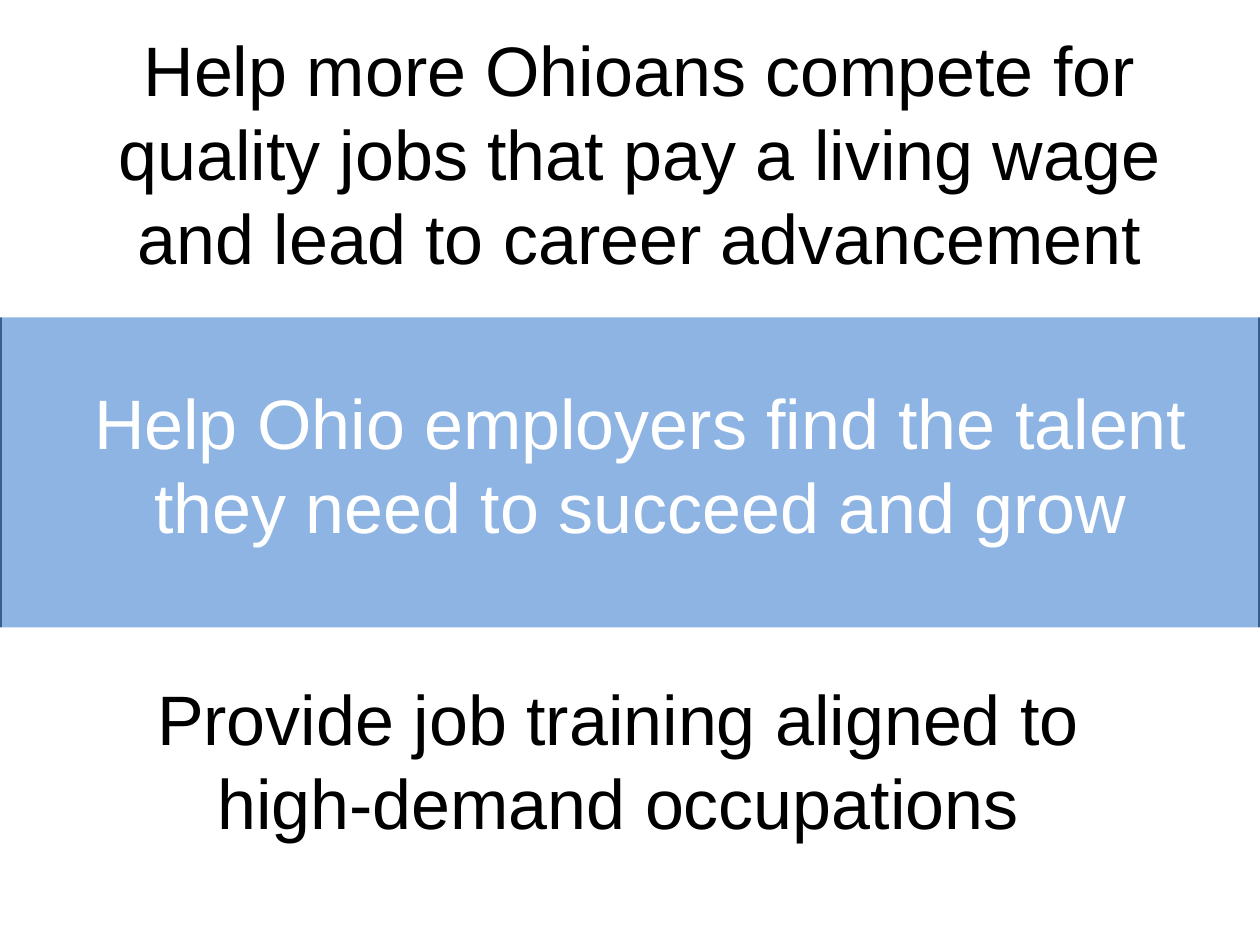
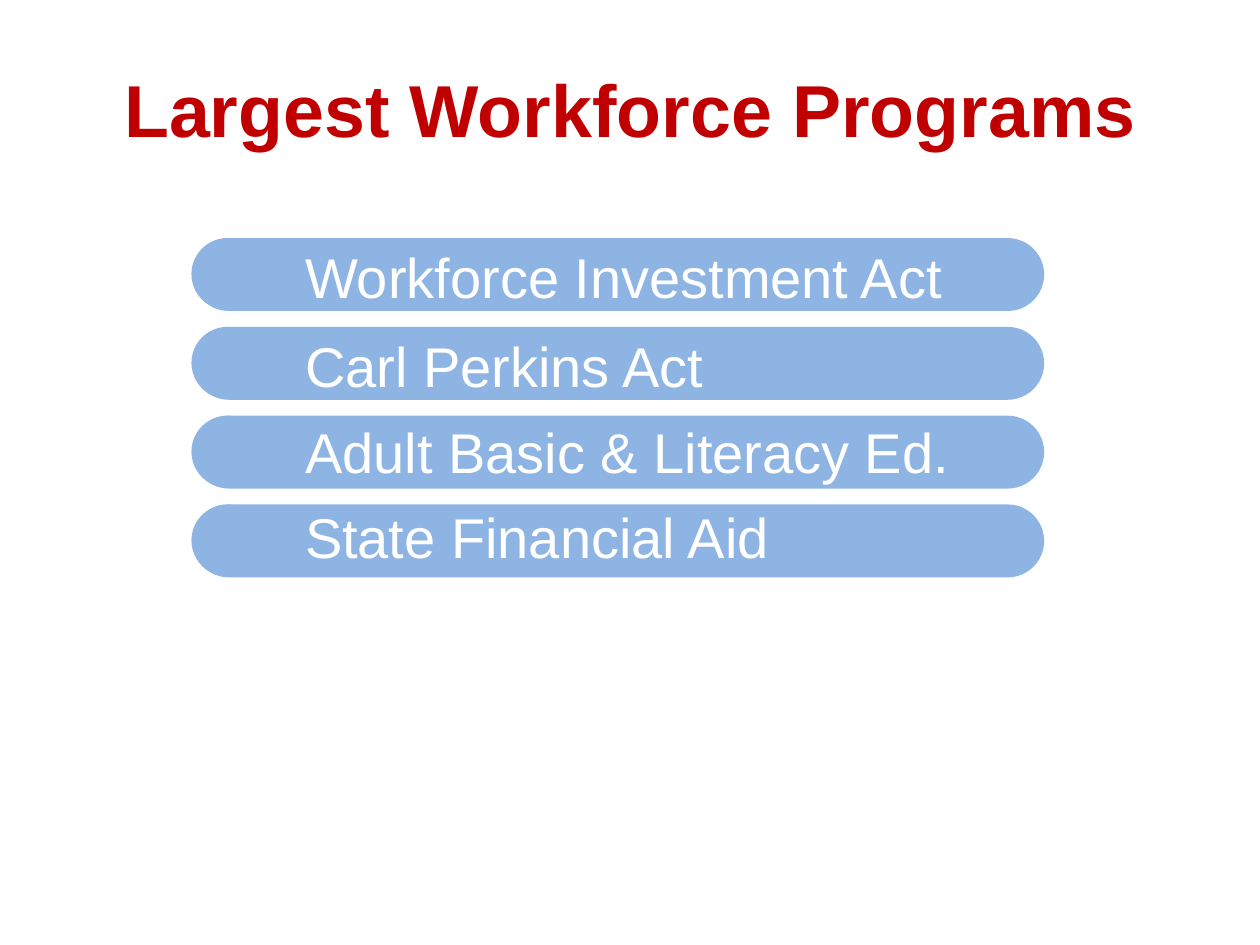
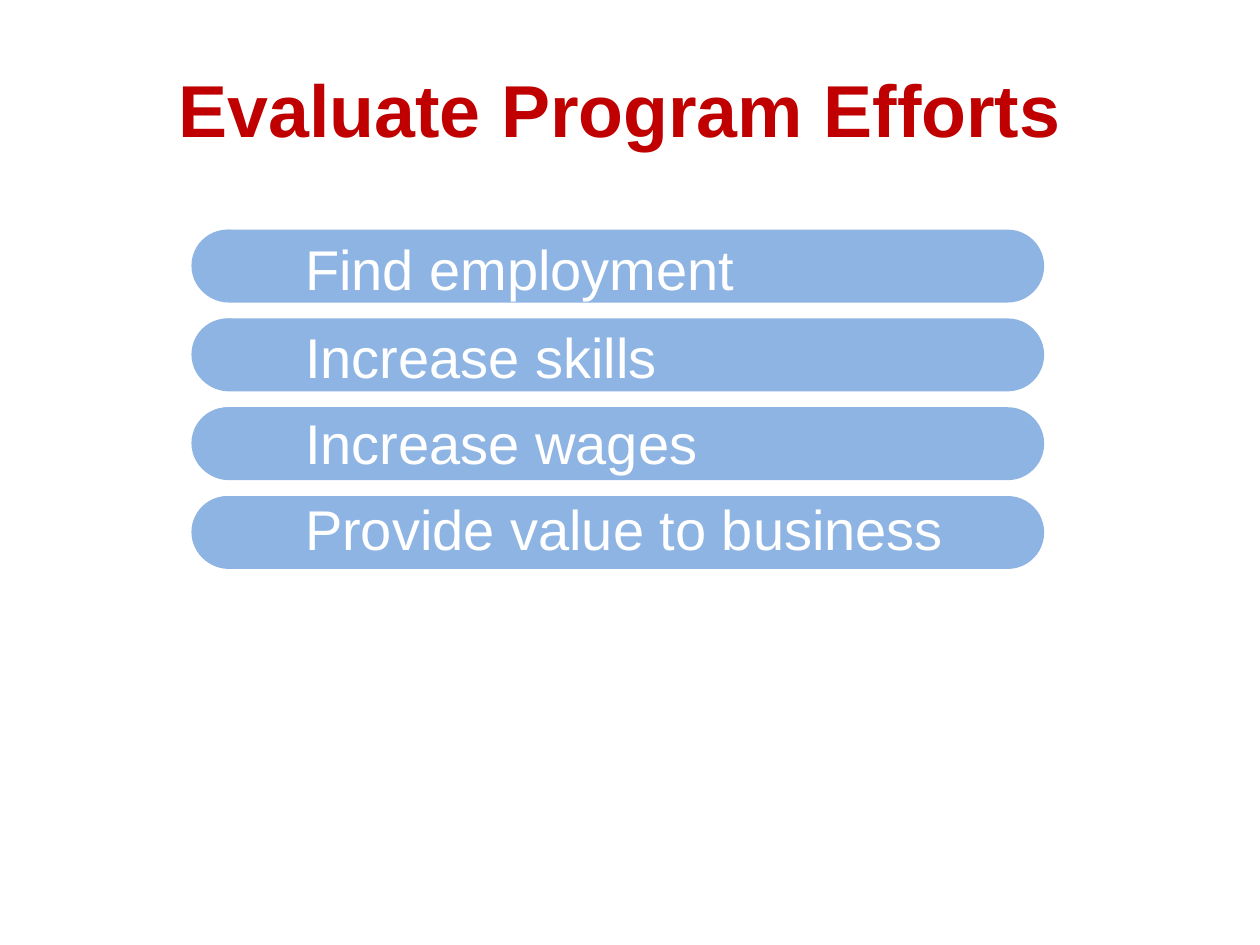
from dataclasses import dataclass

from pptx import Presentation
from pptx.dml.color import RGBColor
from pptx.enum.shapes import MSO_SHAPE
from pptx.enum.text import MSO_ANCHOR, MSO_AUTO_SIZE, PP_ALIGN
from pptx.shapes.autoshape import Shape
from pptx.slide import Slide
from pptx.util import Cm, Pt

RECT, PILL, DISC = MSO_SHAPE.RECTANGLE, MSO_SHAPE.ROUNDED_RECTANGLE, MSO_SHAPE.OVAL
LEFT, CENTER = PP_ALIGN.LEFT, PP_ALIGN.CENTER
TOP, MIDDLE = MSO_ANCHOR.TOP, MSO_ANCHOR.MIDDLE
NO_FIT = MSO_AUTO_SIZE.NONE

# Shared look, lengths in centimetres
FONT = "Arial"
WHITE, BLACK, BLUE, NAVY, RED = "FFFFFF", "000000", "8EB4E3", "3A5F8C", "C00000"
SLIDE_W, SLIDE_H = 25.4, 19.05
BAR_LEFT, BAR_W, BAR_H, BAR_PITCH = 3.88, 17.17, 1.47, 1.79
DISC_LEFT, DISC_D = 3.86, 1.45
LABEL_LEFT, LABEL_W = 6.15, 16.31
LABEL_SHIFTS = (0.09, 0.09, 0.03, -0.03)
BODY_ROW = 2


@dataclass
class Box:
    left: float
    top: float
    width: float
    height: float


@dataclass
class TextStyle:
    size: float
    color: str
    align: PP_ALIGN = CENTER
    bold: bool = False


@dataclass
class Message:
    box: Box
    color: str
    lines: tuple[str, ...]


@dataclass
class BarList:
    title: str
    top: float
    items: tuple[str, ...]


TITLE_BOX = Box(1.27, 1.27, 22.86, 1.8)
TITLE_STYLE = TextStyle(42, RED, bold=True)
LABEL_STYLE = TextStyle(32, WHITE, LEFT)

WHITE_BANDS = (
    Box(0, 6.27, SLIDE_W, 0.13),
    Box(0, 0, SLIDE_W, 6.35),
    Box(0, 12.7, SLIDE_W, 6.35),
    Box(0, 12.65, SLIDE_W, 0.13),
)
MESSAGES = (
    Message(Box(0.86, 0.41, 24.05, 5.38), BLACK,
            ("Help more Ohioans compete for quality jobs that pay "
             "a living wage and lead to career advancement",)),
    Message(Box(1.17, 7.52, 23.47, 3.68), WHITE,
            ("Help Ohio employers find the talent they need to succeed and grow",)),
    Message(Box(-0.05, 13.49, SLIDE_W, 3.68), BLACK,
            ("Provide job training aligned to ", "high-demand occupations ")),
)
BAR_LISTS = (
    BarList("Largest Workforce Programs", 4.8,
            ("Workforce Investment Act", "Carl Perkins Act",
             "Adult Basic & Literacy Ed.", "State Financial Aid")),
    BarList("Evaluate Program Efforts ", 4.63,
            ("Find employment", "Increase skills",
             "Increase wages", "Provide value to business")),
)


def rgb(color: str) -> RGBColor:
    return RGBColor.from_string(color)


def place(sp: Shape, box: Box) -> None:
    sp.left, sp.top = Cm(box.left), Cm(box.top)
    sp.width, sp.height = Cm(box.width), Cm(box.height)


def add_block(slide: Slide, kind: MSO_SHAPE, box: Box, fill: str) -> Shape:
    sp = slide.shapes.add_shape(kind, Cm(box.left), Cm(box.top), Cm(box.width), Cm(box.height))
    sp.shadow.inherit = False
    sp.fill.solid()
    sp.fill.fore_color.rgb = rgb(fill)
    sp.line.fill.background()
    return sp


def add_text_box(slide: Slide) -> Shape:
    return slide.shapes.add_textbox(0, 0, Cm(1), Cm(1))


def write(sp: Shape, box: Box, lines: tuple[str, ...], style: TextStyle,
          anchor: MSO_ANCHOR = TOP) -> None:
    place(sp, box)
    tf = sp.text_frame
    tf.word_wrap = True
    tf.auto_size = NO_FIT
    tf.vertical_anchor = anchor
    for i, line in enumerate(lines):
        p = tf.add_paragraph() if i else tf.paragraphs[0]
        p.alignment = style.align
        p.space_before = Pt(0)
        r = p.add_run()
        r.text = line
        r.font.name = FONT
        r.font.size = Pt(style.size)
        r.font.bold = style.bold
        r.font.color.rgb = rgb(style.color)


def clear_insets(sp: Shape) -> None:
    tf = sp.text_frame
    tf.margin_left = tf.margin_top = tf.margin_right = tf.margin_bottom = 0


def remove_bullet(sp: Shape) -> None:
    pPr = sp.text_frame.paragraphs[0]._p.get_or_add_pPr()
    pPr.set("marL", "0")
    pPr.set("indent", "0")
    pPr.append(pPr.makeelement(
        "{http://schemas.openxmlformats.org/drawingml/2006/main}buNone", {}))


def build_goals(prs: Presentation) -> None:
    slide = prs.slides.add_slide(prs.slide_layouts[6])

    # Blue backdrop, left visible between the white bands
    backdrop = add_block(slide, RECT, Box(0, 0.05, SLIDE_W, SLIDE_H), BLUE)
    backdrop.line.color.rgb = rgb(NAVY)
    backdrop.line.width = Pt(2)
    for band in WHITE_BANDS:
        add_block(slide, RECT, band, WHITE)

    for message in MESSAGES:
        write(add_text_box(slide), message.box, message.lines, TextStyle(40, message.color))


def build_bar_list(prs: Presentation, bar_list: BarList) -> None:
    slide = prs.slides.add_slide(prs.slide_layouts[1])
    title, body = slide.shapes.title, slide.placeholders[1]
    clear_insets(title)
    write(title, TITLE_BOX, (bar_list.title,), TITLE_STYLE, MIDDLE)

    # Rounded bars with a disc at the left end
    tops = [bar_list.top + row * BAR_PITCH for row in range(len(bar_list.items))]
    for top in tops:
        bar = add_block(slide, PILL, Box(BAR_LEFT, top, BAR_W, BAR_H), BLUE)
        bar.adjustments[0] = 0.5
        add_block(slide, DISC, Box(DISC_LEFT, top, DISC_D, DISC_D), BLUE)

    # Labels, with the body placeholder brought in front of the bars
    body.element.getparent().append(body.element)
    remove_bullet(body)
    for row, (item, top, shift) in enumerate(zip(bar_list.items, tops, LABEL_SHIFTS)):
        sp = body if row == BODY_ROW else add_text_box(slide)
        clear_insets(sp)
        write(sp, Box(LABEL_LEFT, top + shift, LABEL_W, BAR_H), (item,), LABEL_STYLE)


def main() -> None:
    prs = Presentation()
    prs.slide_width, prs.slide_height = Cm(SLIDE_W), Cm(SLIDE_H)
    build_goals(prs)
    for bar_list in BAR_LISTS:
        build_bar_list(prs, bar_list)
    prs.save("out.pptx")


if __name__ == "__main__":
    main()
